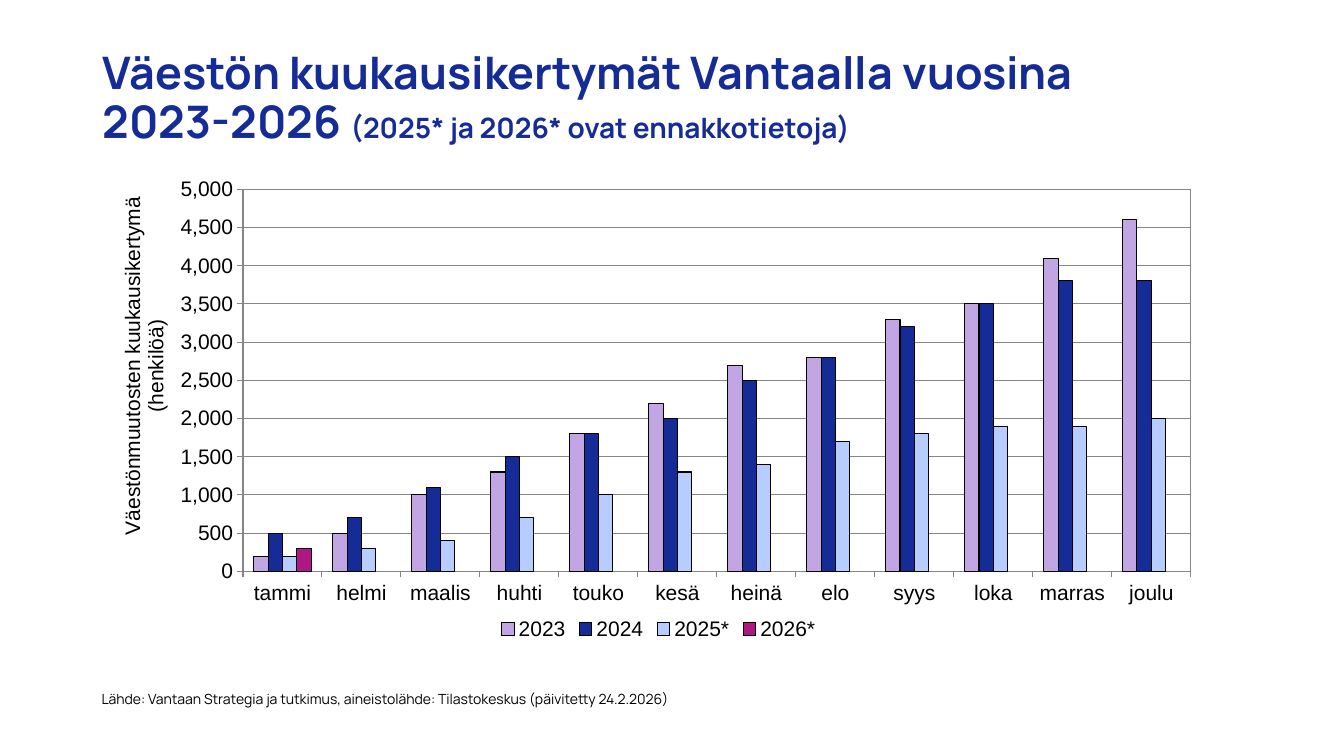
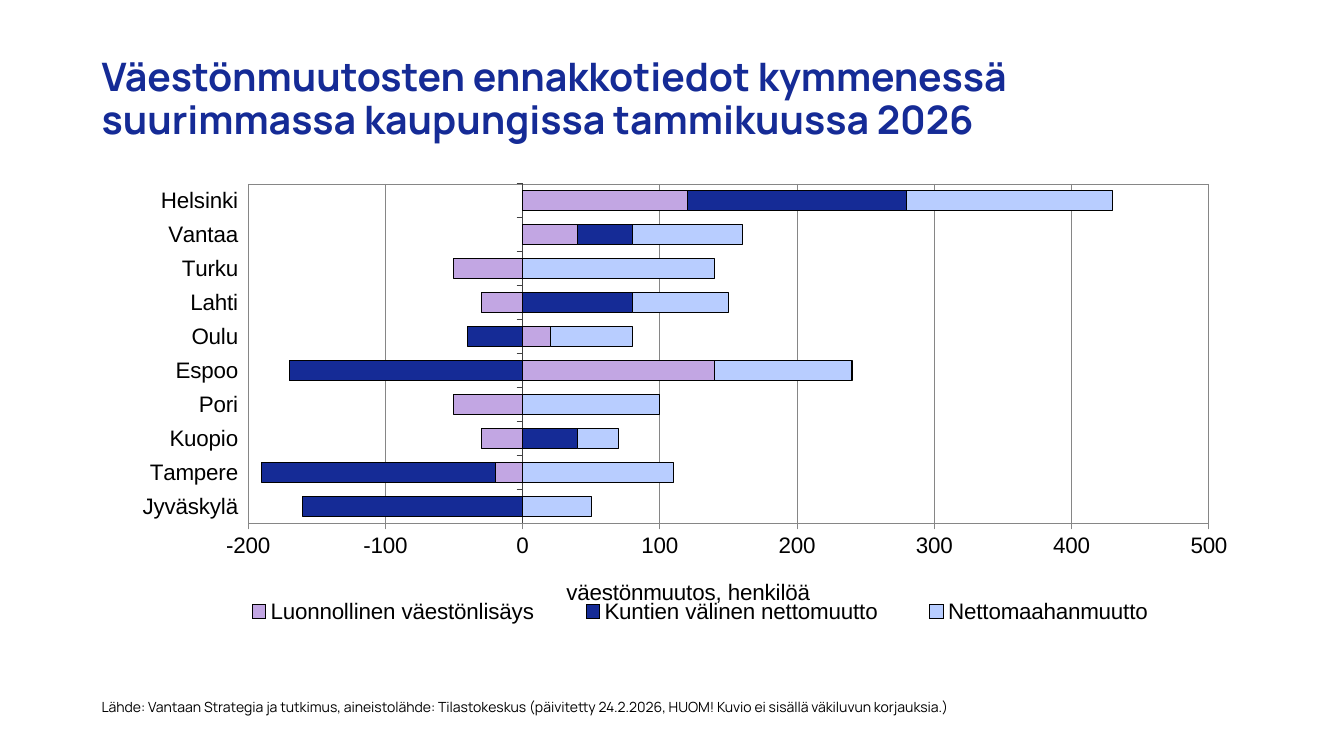
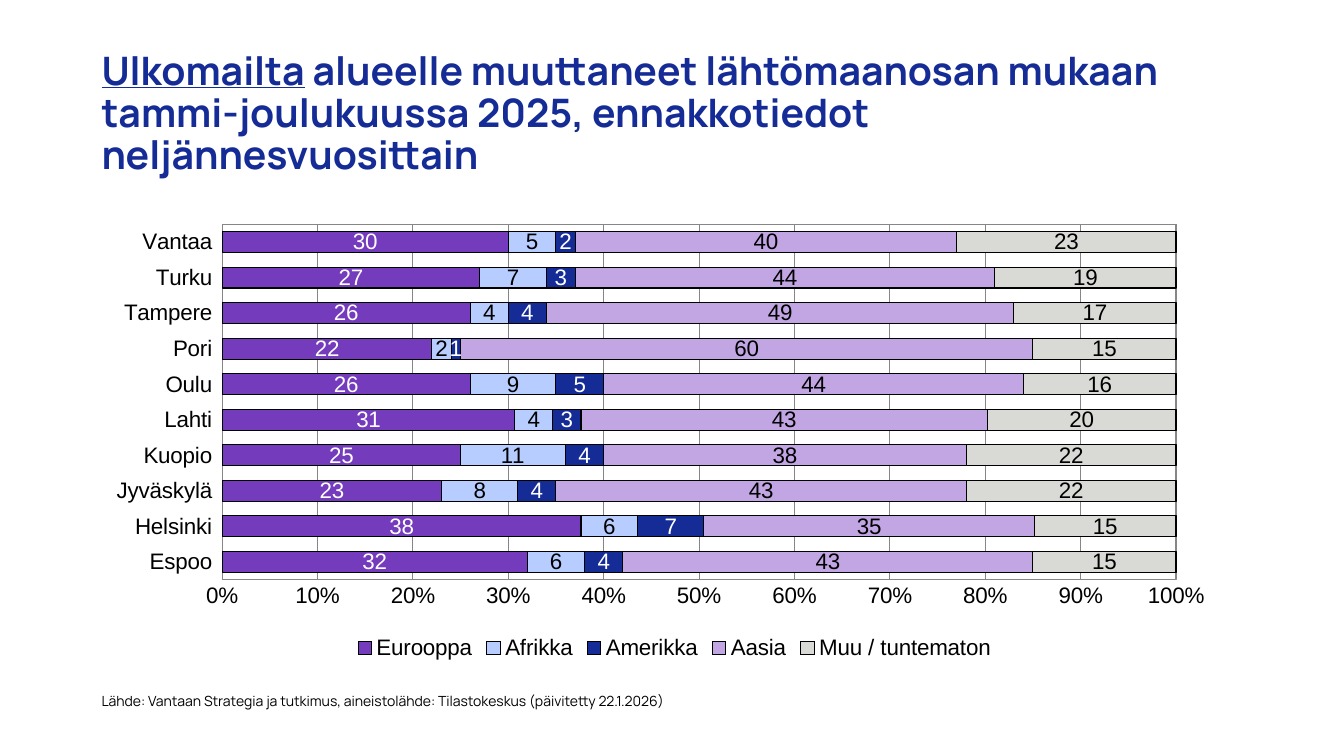
from lxml import etree
from pptx import Presentation
from pptx.chart.data import CategoryChartData
from pptx.dml.color import RGBColor
from pptx.enum.chart import (
    XL_CHART_TYPE, XL_LABEL_POSITION, XL_LEGEND_POSITION, XL_TICK_LABEL_POSITION, XL_TICK_MARK,
)
from pptx.enum.text import MSO_ANCHOR
from pptx.oxml import parse_xml
from pptx.oxml.ns import nsdecls, qn
from pptx.util import Cm, Pt

COLUMNS = XL_CHART_TYPE.COLUMN_CLUSTERED
STACKED = XL_CHART_TYPE.BAR_STACKED
STACKED_100 = XL_CHART_TYPE.BAR_STACKED_100
CENTER = XL_LABEL_POSITION.CENTER
BOTTOM = XL_LEGEND_POSITION.BOTTOM
LOW = XL_TICK_LABEL_POSITION.LOW
TICK_OUT, TICK_NONE = XL_TICK_MARK.OUTSIDE, XL_TICK_MARK.NONE
MIDDLE = MSO_ANCHOR.MIDDLE


class Theme:
    text_font, chart_font = "Manrope", "Arial"
    black, white = RGBColor(0, 0, 0), RGBColor(255, 255, 255)
    navy = RGBColor.from_string("152B96")
    lilac = RGBColor.from_string("C2A6E3")
    sky = RGBColor.from_string("B8CDFF")
    magenta = RGBColor.from_string("B01785")
    purple = RGBColor.from_string("753BBD")
    stone = RGBColor.from_string("D9D9D6")
    grid = RGBColor.from_string("868686")
    dark_axis = RGBColor.from_string("404040")
    title_large, title, title_note, source = Pt(32), Pt(28), Pt(20), Pt(10)
    chart_small, chart = Pt(15), Pt(16)
    line = Pt(0.75)
    title_spacing = 0.9


def apply(target, **values):
    for name, value in values.items():
        setattr(target, name, value)


def set_layout(parent, index, x, y, width=None, height=None, inner=False):
    """Place a chart part at fractions of the chart size."""
    for layout in parent.findall(qn("c:layout")):
        parent.remove(layout)
    layout = etree.Element(qn("c:layout"))
    manual = etree.SubElement(layout, qn("c:manualLayout"))
    values = {"layoutTarget": "inner" if inner else None, "xMode": "edge", "yMode": "edge",
              "x": x, "y": y, "w": width, "h": height}
    for name, value in values.items():
        if value is not None:
            etree.SubElement(manual, qn(f"c:{name}")).set("val", str(value))
    parent.insert(index, layout)


SLIDES = [
    {
        "title_box": (2.34, 1.02, 28.12, 2.97),
        "title": [("Väestön kuukausikertymät Vantaalla vuosina 2023-2026 ", Theme.title_large, False),
                  ("(2025* ja 2026* ovat ennakkotietoja)", Theme.title_note, False)],
        "source_box": (2.31, 17.27, 16.31, 0.76),
        "source": "(päivitetty 24.2.2026)",
        "chart_box": (2.62, 4.39, 27.81, 11.89),
        "type": COLUMNS, "size": Theme.chart_small, "gap": 150, "overlap": 0,
        "plot": (0.126, 0.032, 0.859, 0.81),
        "legend": (0.354, 0.93),
        "ticks": TICK_OUT, "category_line": Theme.grid,
        "format": "#,##0", "scale": (0, 5000, 500),
        "axis_title": ("Väestönmuutosten kuukausikertymä (henkilöä)", -5400000, 0.01, 0.04),
        "labels": False,
        "categories": ["tammi", "helmi", "maalis", "huhti", "touko", "kesä",
                       "heinä", "elo", "syys", "loka", "marras", "joulu"],
        "series": [
            ("2023", Theme.lilac,
             [200, 500, 1000, 1300, 1800, 2200, 2700, 2800, 3300, 3500, 4100, 4600]),
            ("2024", Theme.navy,
             [500, 700, 1100, 1500, 1800, 2000, 2500, 2800, 3200, 3500, 3800, 3800]),
            ("2025*", Theme.sky,
             [200, 300, 400, 700, 1000, 1300, 1400, 1700, 1800, 1900, 1900, 2000]),
            ("2026*", Theme.magenta, [300] + [None] * 11),
        ],
    },
    {
        "title_box": (2.31, 0.97, 28.5, 3.12),
        "title": [("Väestönmuutosten ennakkotiedot kymmenessä suurimmassa kaupungissa "
                   "tammikuussa 2026", Theme.title, False)],
        "source_box": (2.31, 17.48, 24.36, 0.76),
        "source": "(päivitetty 24.2.2026, HUOM! Kuvio ei sisällä väkiluvun korjauksia.)",
        "chart_box": (2.31, 4.29, 29.21, 11.58),
        "type": STACKED, "size": Theme.chart, "gap": 70, "overlap": 100,
        "plot": (0.135, 0.03, 0.829, 0.739),
        "legend": (0.1, 0.92, 0.85, 0.08),
        "ticks": TICK_OUT, "category_line": Theme.dark_axis,
        "format": "0", "scale": (-200, 500, 100),
        "axis_title": ("väestönmuutos, henkilöä", 0, 0.406, 0.878),
        "labels": False,
        "categories": ["Jyväskylä", "Tampere", "Kuopio", "Pori", "Espoo",
                       "Oulu", "Lahti", "Turku", "Vantaa", "Helsinki"],
        "series": [
            ("Luonnollinen väestönlisäys", Theme.lilac,
             [0, -20, -30, -50, 140, 20, -30, -50, 40, 120]),
            ("Kuntien välinen nettomuutto", Theme.navy,
             [-160, -170, 40, 0, -170, -40, 80, 0, 40, 160]),
            ("Nettomaahanmuutto", Theme.sky,
             [50, 110, 30, 100, 100, 60, 70, 140, 80, 150]),
        ],
    },
    {
        "title_box": (2.31, 1.24, 28.5, 3.3),
        "title": [("Ulkomailta", Theme.title, True),
                  (" alueelle muuttaneet lähtömaanosan mukaan tammi-joulukuussa 2025, "
                   "ennakkotiedot neljännesvuosittain", Theme.title, False)],
        "source_box": (2.31, 17.32, 21.67, 0.76),
        "source": "(päivitetty 22.1.2026)",
        "chart_box": (1.83, 5.26, 29.21, 11.58),
        "type": STACKED_100, "size": Theme.chart, "gap": 70, "overlap": 100,
        "plot": (0.129, 0.034, 0.823, 0.773),
        "legend": (0.24, 0.92),
        "ticks": TICK_NONE, "category_line": Theme.grid,
        "format": "0%", "scale": (0, 1, 0.1),
        "axis_title": None,
        "labels": True,
        "categories": ["Espoo", "Helsinki", "Jyväskylä", "Kuopio", "Lahti",
                       "Oulu", "Pori", "Tampere", "Turku", "Vantaa"],
        "series": [
            ("Eurooppa", Theme.purple, [32, 38, 23, 25, 31, 26, 22, 26, 27, 30]),
            ("Afrikka", Theme.sky, [6, 6, 8, 11, 4, 9, 2, 4, 7, 5]),
            ("Amerikka", Theme.navy, [4, 7, 4, 4, 3, 5, 1, 4, 3, 2]),
            ("Aasia", Theme.lilac, [43, 35, 43, 38, 43, 44, 60, 49, 44, 40]),
            ("Muu / tuntematon", Theme.stone, [15, 15, 22, 22, 20, 16, 15, 17, 19, 23]),
        ],
    },
]
SOURCE = "Lähde: Vantaan Strategia ja tutkimus, aineistolähde: Tilastokeskus "

presentation = Presentation()
apply(presentation, slide_width=Cm(33.87), slide_height=Cm(19.05))

for content in SLIDES:
    slide = presentation.slides.add_slide(presentation.slide_layouts[6])

    title_frame = slide.shapes.add_textbox(*map(Cm, content["title_box"])).text_frame
    apply(title_frame, word_wrap=True, vertical_anchor=MIDDLE)
    paragraph = title_frame.paragraphs[0]
    paragraph.line_spacing = Theme.title_spacing
    for text, size, underline in content["title"]:
        run = paragraph.add_run()
        run.text = text
        apply(run.font, name=Theme.text_font, size=size, bold=True, underline=underline)
        run.font.color.rgb = Theme.navy

    source_frame = slide.shapes.add_textbox(*map(Cm, content["source_box"])).text_frame
    source_frame.word_wrap = True
    run = source_frame.paragraphs[0].add_run()
    run.text = SOURCE + content["source"]
    apply(run.font, name=Theme.text_font, size=Theme.source)
    run.font.color.rgb = Theme.black

    chart_data = CategoryChartData(number_format="0")
    chart_data.categories = content["categories"]
    for name, _, values in content["series"]:
        chart_data.add_series(name, values)
    chart = slide.shapes.add_chart(
        content["type"], *map(Cm, content["chart_box"]), chart_data).chart
    apply(chart, has_title=False, has_legend=True)
    apply(chart.font, name=Theme.chart_font, size=content["size"], bold=False)
    chart.font.color.rgb = Theme.black
    apply(chart.legend, position=BOTTOM, include_in_layout=False)

    plot = chart.plots[0]
    apply(plot, gap_width=content["gap"], overlap=content["overlap"], vary_by_categories=False)
    for series, (_, color, _) in zip(plot.series, content["series"]):
        series.format.fill.solid()
        series.format.fill.fore_color.rgb = color
        series.format.line.color.rgb = Theme.black
        series.format.line.width = Theme.line
        series.invert_if_negative = False
        if content["labels"]:
            labels = series.data_labels
            apply(labels, show_value=True, position=CENTER,
                  number_format="0", number_format_is_linked=False)
            apply(labels.font, name=Theme.chart_font, size=content["size"])
            dark = color in (Theme.purple, Theme.navy)
            labels.font.color.rgb = Theme.white if dark else Theme.black

    category_axis, value_axis = chart.category_axis, chart.value_axis
    minimum, maximum, step = content["scale"]
    apply(category_axis, has_major_gridlines=False, tick_label_position=LOW)
    apply(value_axis, has_major_gridlines=True, minimum_scale=minimum,
          maximum_scale=maximum, major_unit=step)
    apply(value_axis.tick_labels, number_format=content["format"], number_format_is_linked=False)
    for axis in (category_axis, value_axis):
        apply(axis, major_tick_mark=content["ticks"], minor_tick_mark=TICK_NONE)
    for line, color in ((category_axis.format.line, content["category_line"]),
                        (value_axis.format.line, Theme.grid),
                        (value_axis.major_gridlines.format.line, Theme.grid)):
        line.color.rgb = color
        line.width = Theme.line

    if content["axis_title"]:
        text, rotation, x, y = content["axis_title"]
        axis_title_frame = value_axis.axis_title.text_frame
        axis_title_frame.text = text
        font = axis_title_frame.paragraphs[0].runs[0].font
        apply(font, name=Theme.chart_font, size=content["size"], bold=False)
        font.color.rgb = Theme.black
        axis_title = chart.element.xpath(".//c:valAx/c:title")[0]
        axis_title.xpath(".//a:bodyPr")[0].set("rot", str(rotation))
        set_layout(axis_title, 1, x, y)

    plot_area = chart.element.xpath(".//c:plotArea")[0]
    set_layout(plot_area, 0, *content["plot"], inner=True)
    plot_area.append(parse_xml(
        f'<c:spPr {nsdecls("c", "a")}><a:noFill/><a:ln w="{Theme.line}"><a:solidFill>'
        f'<a:srgbClr val="{Theme.grid}"/></a:solidFill></a:ln></c:spPr>'))
    set_layout(chart.element.xpath(".//c:legend")[0], 1, *content["legend"])

presentation.save("out.pptx")
